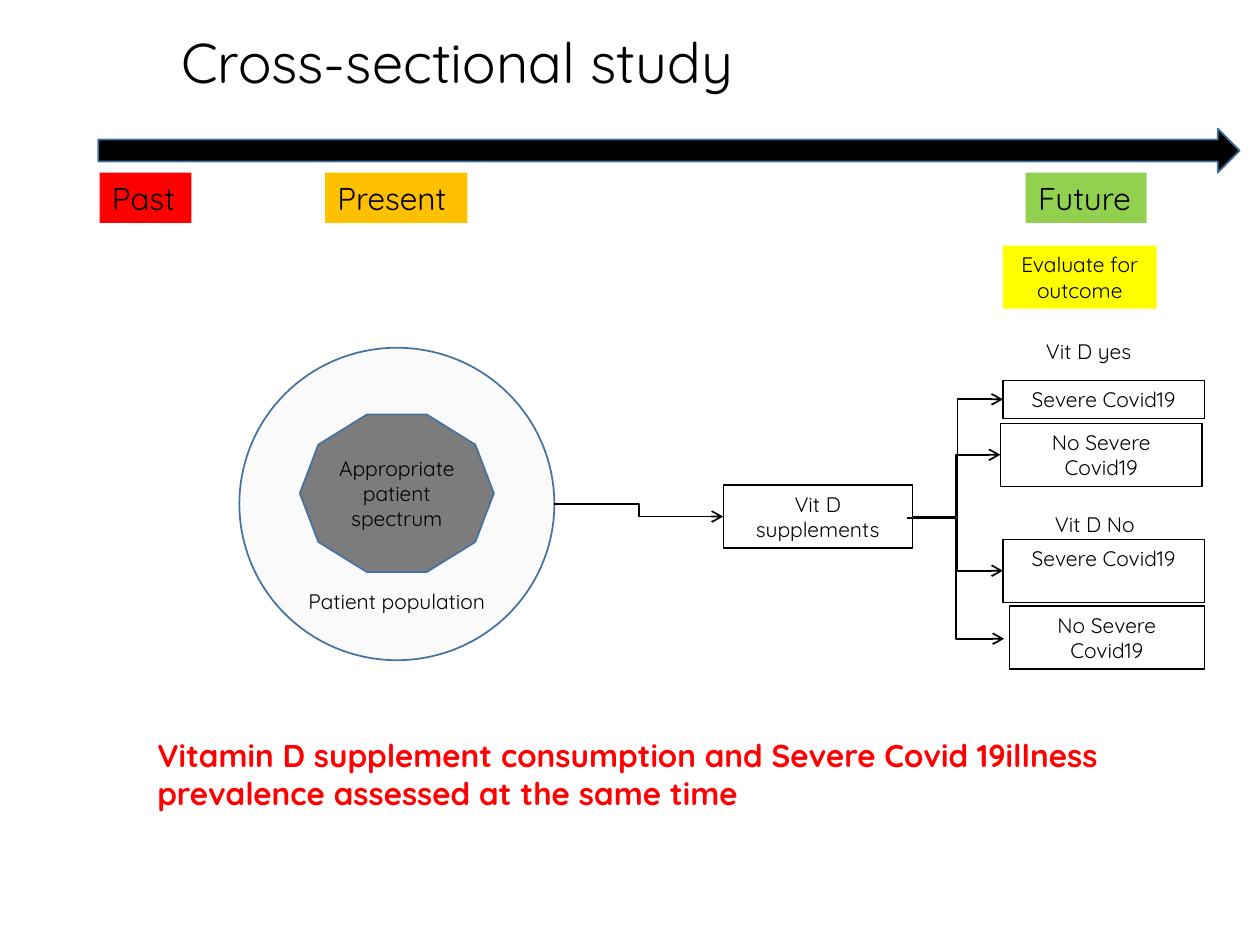
"""Build the cross-sectional study slide on a grid of 100 columns by 75 rows."""
import lxml.etree
import pptx
import pptx.dml.color
import pptx.enum.shapes
import pptx.enum.text
import pptx.oxml.ns
import pptx.util

MSO = pptx.enum.shapes.MSO_SHAPE
ANCHOR = pptx.enum.text.MSO_ANCHOR
ALIGN = pptx.enum.text.PP_ALIGN
qn = pptx.oxml.ns.qn

prs = pptx.Presentation()
prs.slide_width = pptx.util.Inches(10)
prs.slide_height = pptx.util.Inches(7.5)
cell = prs.slide_width // 100
s = prs.slides.add_slide(prs.slide_layouts[6])


def rgb(value):
    return pptx.dml.color.RGBColor.from_string(value)


def add_box(at, text="", size=12, kind=MSO.RECTANGLE, fill=None, line=None, width=1,
            align=ALIGN.CENTER, anchor=ANCHOR.TOP, color="000000", bold=False):
    at = [int(v * cell) for v in at]
    if kind is None:
        sp = s.shapes.add_textbox(*at)
    else:
        sp = s.shapes.add_shape(kind, *at)
        sp.shadow.inherit = False
    if fill:
        sp.fill.solid()
        sp.fill.fore_color.rgb = rgb(fill)
    else:
        sp.fill.background()
    if line:
        sp.line.color.rgb = rgb(line)
        sp.line.width = pptx.util.Pt(width)
    else:
        sp.line.fill.background()
    tf = sp.text_frame
    tf.word_wrap = True
    tf.vertical_anchor = anchor
    if text:
        p = tf.paragraphs[0]
        p.text = text
        p.alignment = align
        p.font.name = "Quicksand"
        p.font.size = pptx.util.Pt(size)
        p.font.bold = bold
        p.font.color.rgb = rgb(color)
    return sp


title = add_box((13.4, 2.3, 85, 8), "Cross-sectional study", 32, None, align=ALIGN.LEFT)
title.text_frame.paragraphs[0].line_spacing = 0.9
add_box((7.8, 10.2, 90.6, 3.5), kind=MSO.RIGHT_ARROW, fill="000000", line="43739E")

for text, x, w, fill in [
    ("Past", 7.9, 7.3, "FF0000"),
    ("Present", 25.8, 11.3, "FFC000"),
    ("Future", 81.4, 9.6, "92D050"),
]:
    add_box((x, 13.7, w, 4), text, 18, fill=fill, align=ALIGN.LEFT)

population = add_box((19, 27.6, 25, 24.8), "Patient population", kind=MSO.OVAL,
                     fill="FAFAFA", line="43739E")
population.text_frame.margin_top = int(15.5 * cell)
population.text_frame.margin_bottom = 0
add_box((23.8, 32.9, 15.4, 12.5), "Appropriate patient spectrum", kind=MSO.DECAGON,
        fill="7C7C7C", line="43739E", anchor=ANCHOR.MIDDLE)
add_box((79.6, 19.5, 12.2, 5), "Evaluate for outcome", fill="FFFF00")

for x1, y1, x2, y2 in [
    (44, 40, 57.4, 41),
    (72.4, 41, 79.6, 31.7),
    (72.4, 41, 79.4, 36.1),
    (72.4, 41, 79.6, 45.3),
    (72, 41.1, 79.7, 50.7),
]:
    cx = s.shapes.add_connector(pptx.enum.shapes.MSO_CONNECTOR.ELBOW,
                                *[int(v * cell) for v in (x1, y1, x2, y2)])
    cx.line.color.rgb = rgb("000000")
    cx.line.width = pptx.util.Pt(1)
    ln = cx.line._get_or_add_ln()
    lxml.etree.SubElement(ln, qn("a:tailEnd"), type="arrow")
    lxml.etree.SubElement(ln.getparent(), qn("a:effectLst"))

for text, x, y in [("Vit D yes", 80.1, 26.4), ("Vit D No", 80.6, 40.1)]:
    add_box((x, y, 12.6, 3), text, kind=None)

for text, x, y, w, h in [
    ("Vit D supplements", 57.4, 38.5, 15, 5),
    ("Severe Covid19", 79.6, 30.2, 16, 3),
    ("No Severe Covid19", 79.4, 33.6, 16, 5),
    ("Severe Covid19", 79.6, 42.8, 16, 5),
    ("No Severe Covid19", 80.1, 48.1, 15.5, 5),
]:
    add_box((x, y, w, h), text, line="000000", width=0.75)

add_box((11.5, 57.9, 79.8, 7.1),
        "Vitamin D supplement consumption and Severe Covid 19illness "
        "prevalence assessed at the same time",
        18, None, align=ALIGN.LEFT, color="FF0000", bold=True)

prs.save("out.pptx")
